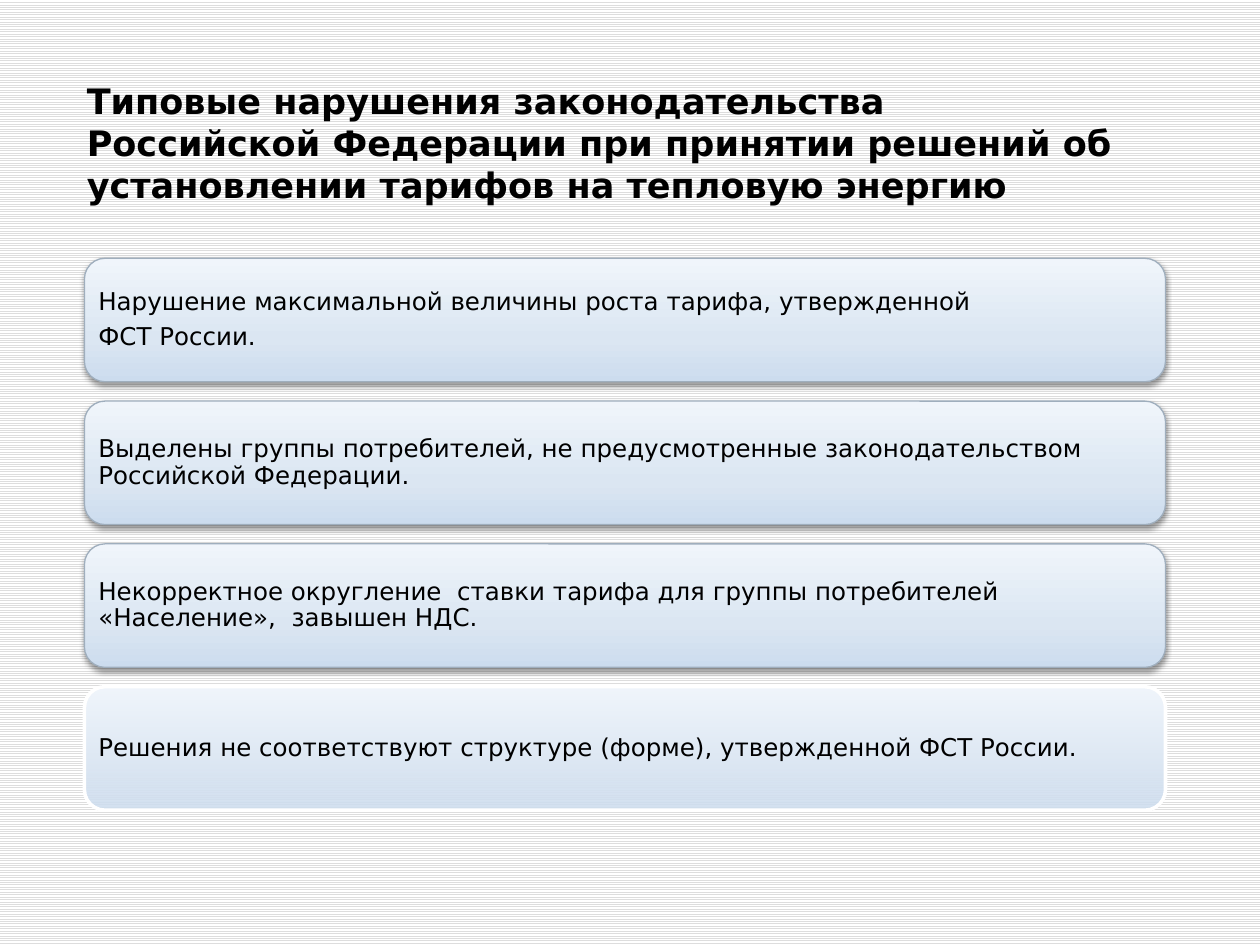
from dataclasses import dataclass

import pptx
import pptx.dml.color
import pptx.enum.dml
import pptx.enum.shapes
import pptx.enum.text
import pptx.oxml
import pptx.oxml.ns
import pptx.util
from copy import deepcopy
from pptx.util import Inches, Pt

FONT = "DejaVu Sans"
BLACK = "000000"
GRADIENT = [(0, "CCDCEE"), (0.35, "DBE6F2"), (1, "F0F5FB")]

CARD_LEFT, CARD_TOP = 0.67, 2.05
CARD_WIDTH, CARD_HEIGHT = 8.58, 0.98
CARD_STEP = 3.4 / 3
TEXT_MARGIN = 0.05
TEXT_INSET = 0.06

SHADOW = (
    f'<a:effectLst {pptx.oxml.ns.nsdecls("a")}>'
    f'<a:outerShdw blurRad="{Pt(3.1)}" dist="{Pt(1.6)}" dir="5400000" rotWithShape="0">'
    '<a:srgbClr val="000000"><a:alpha val="38000"/></a:srgbClr>'
    '</a:outerShdw></a:effectLst>'
)


@dataclass
class Violation:
    text: str
    border: str = "9FAEBD"
    border_width: float = 0.75
    raised: bool = True


TITLE = (
    "Типовые нарушения законодательства \v"
    "Российской Федерации при принятии решений об "
    "установлении тарифов на тепловую энергию"
)
VIOLATIONS = [
    Violation("Нарушение максимальной величины роста тарифа, утвержденной\nФСТ России."),
    Violation("Выделены группы потребителей, не предусмотренные законодательством "
              "Российской Федерации."),
    Violation("Некорректное округление  ставки тарифа для группы потребителей "
              "«Население»,  завышен НДС."),
    Violation("Решения не соответствуют структуре (форме), утвержденной ФСТ России.",
              border="FFFFFF", border_width=2, raised=False),
]


def color(value: str) -> pptx.dml.color.RGBColor:
    return pptx.dml.color.RGBColor.from_string(value)


def add_text(slide, text: str, box: tuple, size: float, anchor, insets: tuple,
             bold: bool = False):
    frame = slide.shapes.add_textbox(*map(Inches, box)).text_frame
    frame.word_wrap = True
    frame.vertical_anchor = anchor
    (frame.margin_left, frame.margin_top,
     frame.margin_right, frame.margin_bottom) = map(Inches, insets)
    frame.text = text
    for paragraph in frame.paragraphs:
        for run in paragraph.runs:
            run.font.name = FONT
            run.font.size = Pt(size)
            run.font.bold = bold
            run.font.color.rgb = color(BLACK)
    return frame


def fill_gradient(card, first_stop_alpha: int) -> None:
    card.fill.gradient()
    card.fill.gradient_angle = 90
    # The default gradient has two stops; a third is cloned
    stop_list = card._element.spPr.find(".//" + pptx.oxml.ns.qn("a:gsLst"))
    stop_list.append(deepcopy(stop_list[-1]))
    for stop, (position, value) in zip(card.fill.gradient_stops, GRADIENT):
        stop.position = position
        stop.color.rgb = color(value)
    if first_stop_alpha < 100:
        stop_list[0][0].append(pptx.oxml.parse_xml(
            f'<a:alpha {pptx.oxml.ns.nsdecls("a")} val="{first_stop_alpha * 1000}"/>'))


def add_violation(slide, violation: Violation, top: float) -> None:
    card = slide.shapes.add_shape(
        pptx.enum.shapes.MSO_SHAPE.ROUNDED_RECTANGLE,
        Inches(CARD_LEFT), Inches(top), Inches(CARD_WIDTH), Inches(CARD_HEIGHT))
    fill_gradient(card, 100 if violation.raised else 85)
    card.line.color.rgb = color(violation.border)
    card.line.width = Pt(violation.border_width)
    if violation.raised:
        card._element.spPr.append(pptx.oxml.parse_xml(SHADOW))
    else:
        card.shadow.inherit = False

    frame = add_text(
        slide, violation.text,
        (CARD_LEFT + TEXT_MARGIN, top + TEXT_MARGIN,
         CARD_WIDTH - 2 * TEXT_MARGIN, CARD_HEIGHT - 2 * TEXT_MARGIN),
        14, pptx.enum.text.MSO_ANCHOR.MIDDLE, (TEXT_INSET,) * 4)
    for paragraph in frame.paragraphs:
        paragraph.line_spacing = 0.9
        paragraph.space_after = Pt(4.9)


def main() -> None:
    presentation = pptx.Presentation()
    presentation.slide_width = Inches(10)
    presentation.slide_height = Inches(7.5)
    slide = presentation.slides.add_slide(presentation.slide_layouts[6])

    # Striped background
    background = slide.background.fill
    background.patterned()
    background.pattern = pptx.enum.dml.MSO_PATTERN.LIGHT_HORIZONTAL
    background.fore_color.rgb = color("DDDDDD")
    background.back_color.rgb = color("FFFFFF")

    # Title, raised above the bottom edge of its box
    add_text(slide, TITLE, (0.59, 0.68, 8.75, 1.33), 20,
             pptx.enum.text.MSO_ANCHOR.BOTTOM, (0.1, 0, 0.1, 0.38), bold=True)

    # Stack of violations
    for index, violation in enumerate(VIOLATIONS):
        add_violation(slide, violation, CARD_TOP + index * CARD_STEP)

    presentation.save("out.pptx")


if __name__ == "__main__":
    main()
